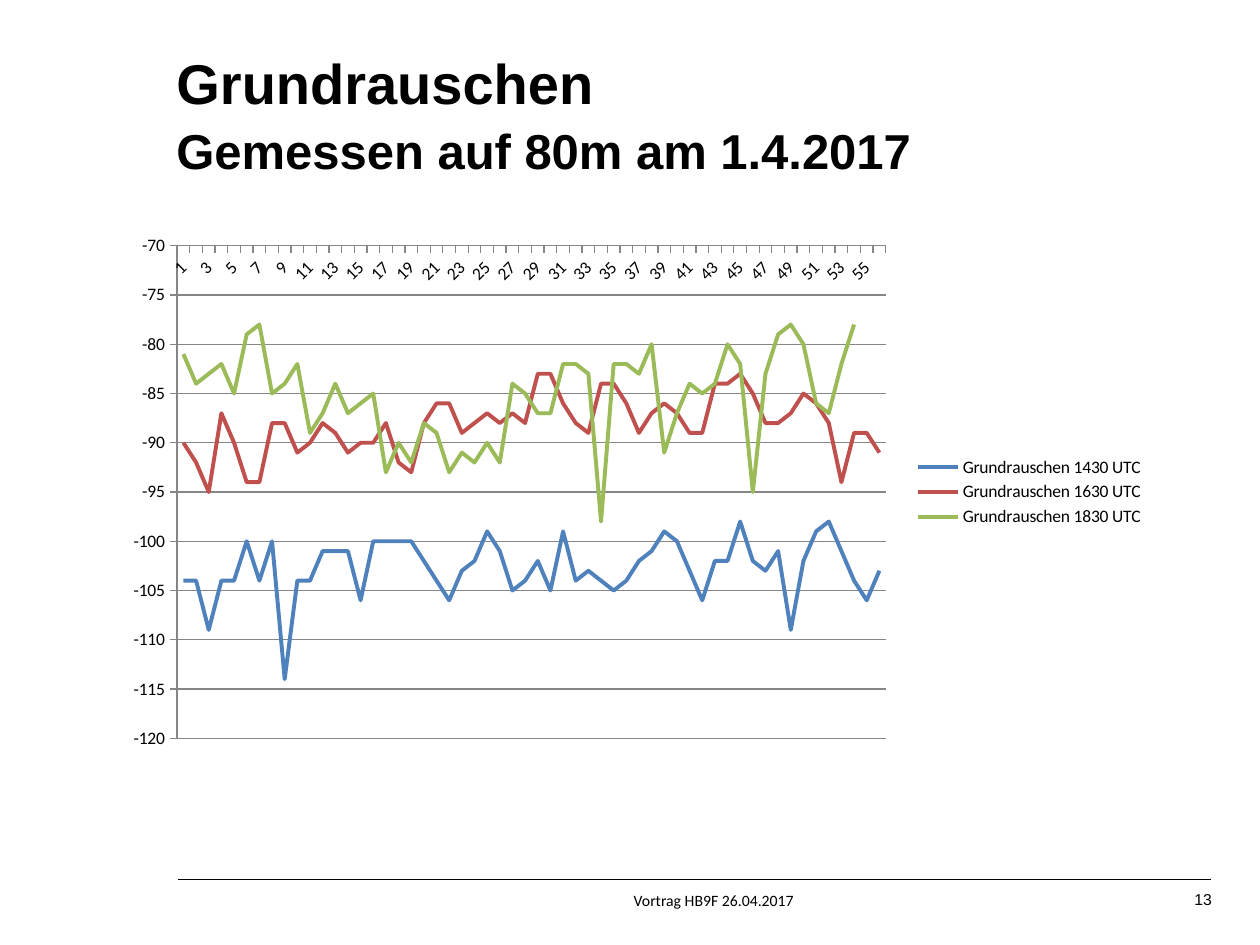
from dataclasses import dataclass

from lxml.etree import SubElement
from pptx import Presentation
from pptx.chart.data import CategoryChartData as Data
from pptx.dml.color import RGBColor as Rgb
from pptx.enum.chart import XL_CHART_TYPE as Kind, XL_LEGEND_POSITION as Side
from pptx.enum.chart import XL_TICK_MARK as Tick
from pptx.enum.shapes import MSO_CONNECTOR as Conn
from pptx.enum.text import MSO_ANCHOR as Anchor, PP_ALIGN as Align
from pptx.oxml import parse_xml
from pptx.oxml.ns import nsdecls, qn
from pptx.util import Pt


@dataclass(frozen=True)
class Theme:
    ink: Rgb = Rgb(0, 0, 0)
    grid: Rgb = Rgb(0x86, 0x86, 0x86)
    lines: tuple = (Rgb(0x4F, 0x81, 0xBD), Rgb(0xC0, 0x50, 0x4D),
                    Rgb(0x9B, 0xBB, 0x59))
    head: str = "Arial"
    body: str = "Calibri"
    title: int = 32
    sub: int = 28
    label: int = 10
    small: int = 9


THEME = Theme()

NOISE = {
    "Grundrauschen 1430 UTC": (
        -104, -104, -109, -104, -104, -100, -104, -100, -114, -104, -104, -101,
        -101, -101, -106, -100, -100, -100, -100, -102, -104, -106, -103, -102,
        -99, -101, -105, -104, -102, -105, -99, -104, -103, -104, -105, -104,
        -102, -101, -99, -100, -103, -106, -102, -102, -98, -102, -103, -101,
        -109, -102, -99, -98, -101, -104, -106, -103),
    "Grundrauschen 1630 UTC": (
        -90, -92, -95, -87, -90, -94, -94, -88, -88, -91, -90, -88, -89, -91,
        -90, -90, -88, -92, -93, -88, -86, -86, -89, -88, -87, -88, -87, -88,
        -83, -83, -86, -88, -89, -84, -84, -86, -89, -87, -86, -87, -89, -89,
        -84, -84, -83, -85, -88, -88, -87, -85, -86, -88, -94, -89, -89, -91),
    "Grundrauschen 1830 UTC": (
        -81, -84, -83, -82, -85, -79, -78, -85, -84, -82, -89, -87, -84, -87,
        -86, -85, -93, -90, -92, -88, -89, -93, -91, -92, -90, -92, -84, -85,
        -87, -87, -82, -82, -83, -98, -82, -82, -83, -80, -91, -87, -84, -85,
        -84, -80, -82, -95, -83, -79, -78, -80, -86, -87, -82, -78),
}


def place(shape, box):
    shape.left, shape.top, shape.width, shape.height = map(Pt, box)


def write(frame, *rows, sizes, face, bold=False, align=Align.LEFT,
          anchor=Anchor.MIDDLE, wrap=True, inset=(7.2, 3.6), space=1.0):
    """Fill a frame with one paragraph, each row on its own line."""
    frame.word_wrap, frame.vertical_anchor = wrap, anchor
    frame.margin_left = frame.margin_right = Pt(inset[0])
    frame.margin_top = frame.margin_bottom = Pt(inset[1])
    para = frame.paragraphs[0]
    para.alignment, para.line_spacing = align, space
    for n, (row, size) in enumerate(zip(rows, sizes)):
        if n:
            para.add_line_break()
        run = para.add_run()
        run.text = row
        font = run.font
        font.size, font.name, font.bold = Pt(size), face, bold
        font.color.rgb = THEME.ink


def add_head(slide, box):
    title = slide.shapes.title
    place(title, box)
    write(title.text_frame, "Grundrauschen", "Gemessen auf 80m am 1.4.2017",
          sizes=(THEME.title, THEME.sub), face=THEME.head, bold=True,
          space=1.07)


def fix_plot(chart, left, top, width, height):
    """Pin the inner plot area, given as shares of the chart."""
    area = chart._chartSpace.chart.plotArea
    for old in area.findall(qn("c:layout")):
        area.remove(old)
    parts = {"layoutTarget": "inner", "xMode": "edge", "yMode": "edge",
             "x": left, "y": top, "w": width, "h": height}
    layout = parse_xml(f"<c:layout {nsdecls('c')}/>")
    manual = SubElement(layout, qn("c:manualLayout"))
    for tag, val in parts.items():
        SubElement(manual, qn(f"c:{tag}")).set("val", str(val))
    area.insert(0, layout)


def style_axes(chart):
    cat, val = chart.category_axis, chart.value_axis
    for axis in (cat, val):
        axis.major_tick_mark, axis.minor_tick_mark = Tick.OUTSIDE, Tick.NONE
        axis.format.line.color.rgb = THEME.grid
        axis.format.line.width = Pt(0.75)
        axis.tick_labels.font.size = Pt(THEME.label)
    cat.has_major_gridlines = False
    cat.tick_labels.font._element.getparent().getparent().getparent().find(
        qn("a:bodyPr")).set("rot", "-2700000")
    skip = parse_xml(f'<c:tickLblSkip {nsdecls("c")} val="2"/>')
    cat._element.find(qn("c:lblOffset")).addnext(skip)
    val.minimum_scale, val.maximum_scale, val.major_unit = -120, -70, 5
    val.has_major_gridlines = True
    val.major_gridlines.format.line.color.rgb = THEME.grid
    val.major_gridlines.format.line.width = Pt(0.75)


def add_graph(slide, box):
    data = Data(number_format="General")
    data.categories = [str(n) for n in range(1, 57)]
    for name, vals in NOISE.items():
        data.add_series(name, vals)
    chart = slide.shapes.add_chart(Kind.LINE, *map(Pt, box), data).chart
    chart.has_title = False
    font = chart.font
    font.size, font.name = Pt(THEME.label), THEME.body
    font.color.rgb = THEME.ink
    chart.has_legend = True
    chart.legend.position = Side.RIGHT
    chart.legend.include_in_layout = False
    chart.plots[0].vary_by_categories = False
    for line, color in zip(chart.plots[0].series, THEME.lines):
        line.smooth = False
        line.format.line.color.rgb = color
        line.format.line.width = Pt(2.25)
    style_axes(chart)
    fix_plot(chart, 0.06, 0.04, 0.68, 0.92)


def add_foot(slide, box):
    left, top, width, height = box
    shapes = slide.shapes
    rule = shapes.add_connector(Conn.STRAIGHT, Pt(left + width), Pt(top),
                                Pt(left), Pt(top))
    rule.line.color.rgb, rule.line.width = THEME.ink, Pt(0.75)
    SubElement(rule._element.spPr, qn("a:effectLst"))
    note = shapes.add_textbox(0, 0, 0, 0)
    place(note, (left + 142.5, top + 3, 327.6, 17.3))
    write(note.text_frame, "Vortrag HB9F 26.04.2017", sizes=(THEME.small,),
          face=THEME.body, align=Align.CENTER, wrap=False)
    page = shapes.add_textbox(0, 0, 0, 0)
    place(page, (left + width - 17.4, top + 5.8, 18, 10.8))
    write(page.text_frame, "13", sizes=(THEME.small,), face=THEME.head,
          align=Align.RIGHT, anchor=Anchor.TOP, wrap=False, inset=(0, 0))


def main():
    deck = Presentation()
    deck.slide_width, deck.slide_height = Pt(720), Pt(540)
    slide = deck.slides.add_slide(deck.slide_layouts[5])
    add_head(slide, (93.6, 21.6, 590.4, 84.2))
    add_graph(slide, (65.5, 128.2, 595.5, 306))
    add_foot(slide, (101.5, 502.6, 590.4, 24))
    deck.save("out.pptx")


if __name__ == "__main__":
    main()
